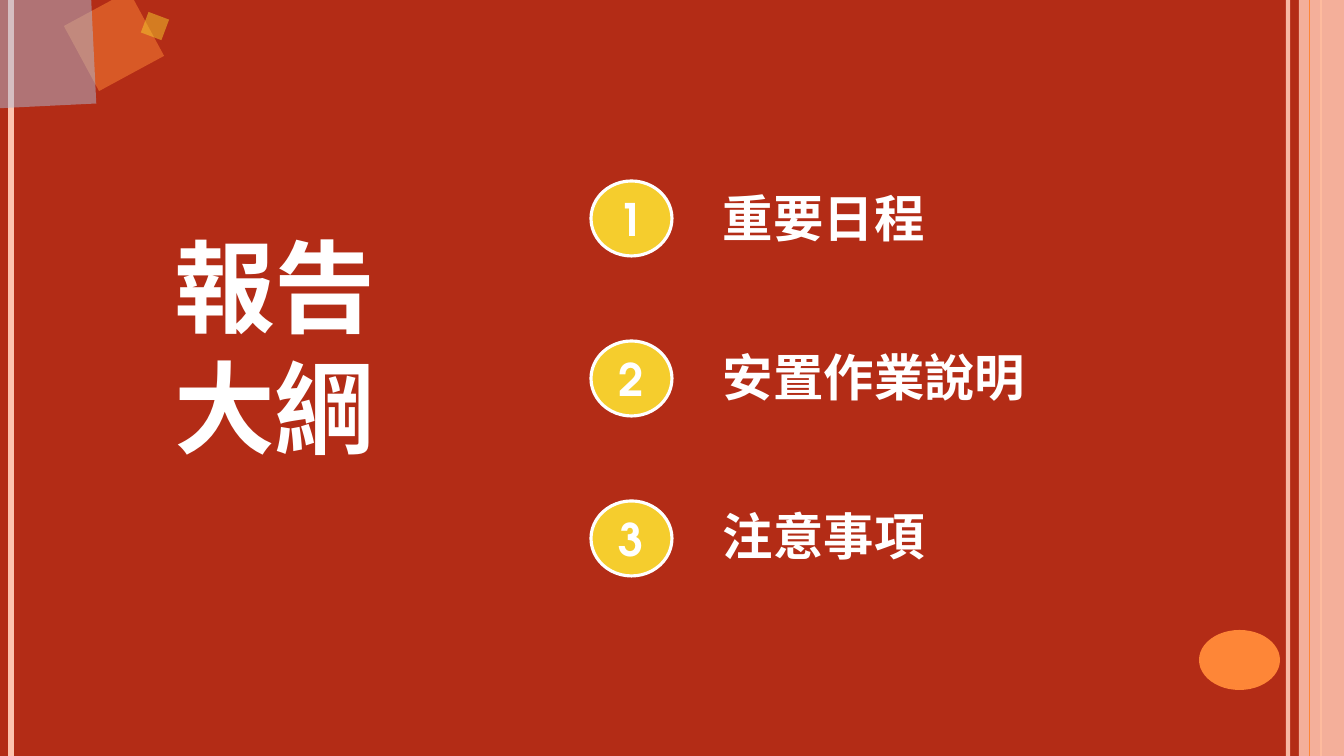
import pptx
import pptx.util
import pptx.dml.color
import pptx.enum.shapes
import pptx.enum.text
import pptx.oxml.ns
import pptx.oxml.xmlchemy

RGB = pptx.dml.color.RGBColor
RED = RGB(0xB3, 0x2C, 0x16)
PINK = RGB(0xFE, 0xC3, 0xAE)
ORANGE = RGB(0xFE, 0x86, 0x37)
BLUE = RGB(0xAE, 0xBA, 0xD5)
GOLD = RGB(0xF5, 0xCD, 0x2D)
WHITE = RGB(0xFF, 0xFF, 0xFF)

SANS = "Noto Sans CJK SC"
ROUND = "TeX Gyre Adventor"
WIDE, HIGH = 1344, 756
KIND = pptx.enum.shapes.MSO_SHAPE
ALIGN = pptx.enum.text.PP_ALIGN
TOPICS = ["重要日程", "安置作業說明", "注意事項"]


def px(size):
    return round(size * 914400 / 100.8)


def apply(item, style):
    for name, value in style.items():
        setattr(item, name, value)


def add_node(parent, tag, **values):
    node = pptx.oxml.xmlchemy.OxmlElement(tag)
    for name, value in values.items():
        node.set(name, value)
    parent.append(node)


def fade(shape, part):
    tint = shape._element.spPr.find(".//" + pptx.oxml.ns.qn("a:srgbClr"))
    add_node(tint, "a:alpha", val=str(part * 1000))


def add_rule(shapes, left, color, width, part=100):
    rule = shapes.add_connector(
        pptx.enum.shapes.MSO_CONNECTOR.STRAIGHT, px(left), 0, px(left), px(HIGH)
    )
    rule.line.color.rgb = color
    rule.line.width = pptx.util.Pt(width)
    add_node(rule._element.spPr, "a:effectLst")
    if part < 100:
        fade(rule, part)


def add_form(shapes, kind, box, color, part=100, turn=0):
    form = shapes.add_shape(kind, *map(px, box))
    form.shadow.inherit = False
    form.fill.solid()
    form.fill.fore_color.rgb = color
    form.line.fill.background()
    form.rotation = turn
    if part < 100:
        fade(form, part)
    return form


def write(frame, lines, size, face, align):
    for i, line in enumerate(lines):
        para = frame.paragraphs[0] if i == 0 else frame.add_paragraph()
        para.alignment = align
        run = para.add_run()
        run.text = line
        apply(run.font, {"size": pptx.util.Pt(size), "name": face, "bold": True})
        run.font.color.rgb = WHITE
        add_node(run.font._element, "a:ea", typeface=face)


def add_text(shapes, box, lines, size, align):
    frame = shapes.add_textbox(*map(px, box)).text_frame
    apply(frame, {
        "word_wrap": False,
        "auto_size": pptx.enum.text.MSO_AUTO_SIZE.SHAPE_TO_FIT_TEXT,
    })
    write(frame, lines, size, SANS, align)


def add_topic(shapes, index, topic):
    group = shapes.add_group_shape().shapes
    width = 22 + 51 * len(topic)
    add_text(group, (713, 182 + 159 * index, width, 72), [topic], 36, ALIGN.LEFT)
    badge = add_form(group, KIND.OVAL, (591, 181 + 160 * index, 81, 75), GOLD)
    badge.line.color.rgb = WHITE
    badge.line.width = pptx.util.Pt(2.25)
    badge.text_frame.vertical_anchor = pptx.enum.text.MSO_ANCHOR.MIDDLE
    write(badge.text_frame, [str(index + 1)], 32, ROUND, ALIGN.CENTER)


def add_decor(shapes):
    add_rule(shapes, 1288, PINK, 3, 93)
    add_rule(shapes, 11, PINK, 4.5)
    add_rule(shapes, 1321, ORANGE, 1.5)
    add_form(shapes, KIND.RECTANGLE, (1299, 0, 45, HIGH), PINK, 87)
    add_rule(shapes, 1310, ORANGE, 0.75)
    add_form(shapes, KIND.OVAL, (1199, 630, 81, 60), ORANGE)
    for left, top, side, color, turn in [
        (77, 4, 74, ORANGE, 331.6),
        (-46, -32, 139, BLUE, 357.2),
        (144, 15, 22, GOLD, 290.5),
    ]:
        add_form(shapes, KIND.RECTANGLE, (left, top, side, side), color, 50, turn)


def main():
    deck = pptx.Presentation()
    apply(deck, {"slide_width": px(WIDE), "slide_height": px(HIGH)})
    slide = deck.slides.add_slide(deck.slide_layouts[6])
    slide.background.fill.solid()
    slide.background.fill.fore_color.rgb = RED
    add_decor(slide.shapes)
    for index, topic in enumerate(TOPICS):
        add_topic(slide.shapes, index, topic)
    add_text(slide.shapes, (163, 220, 224, 254), ["報告", "大綱"], 72, ALIGN.CENTER)
    deck.save("out.pptx")


if __name__ == "__main__":
    main()
